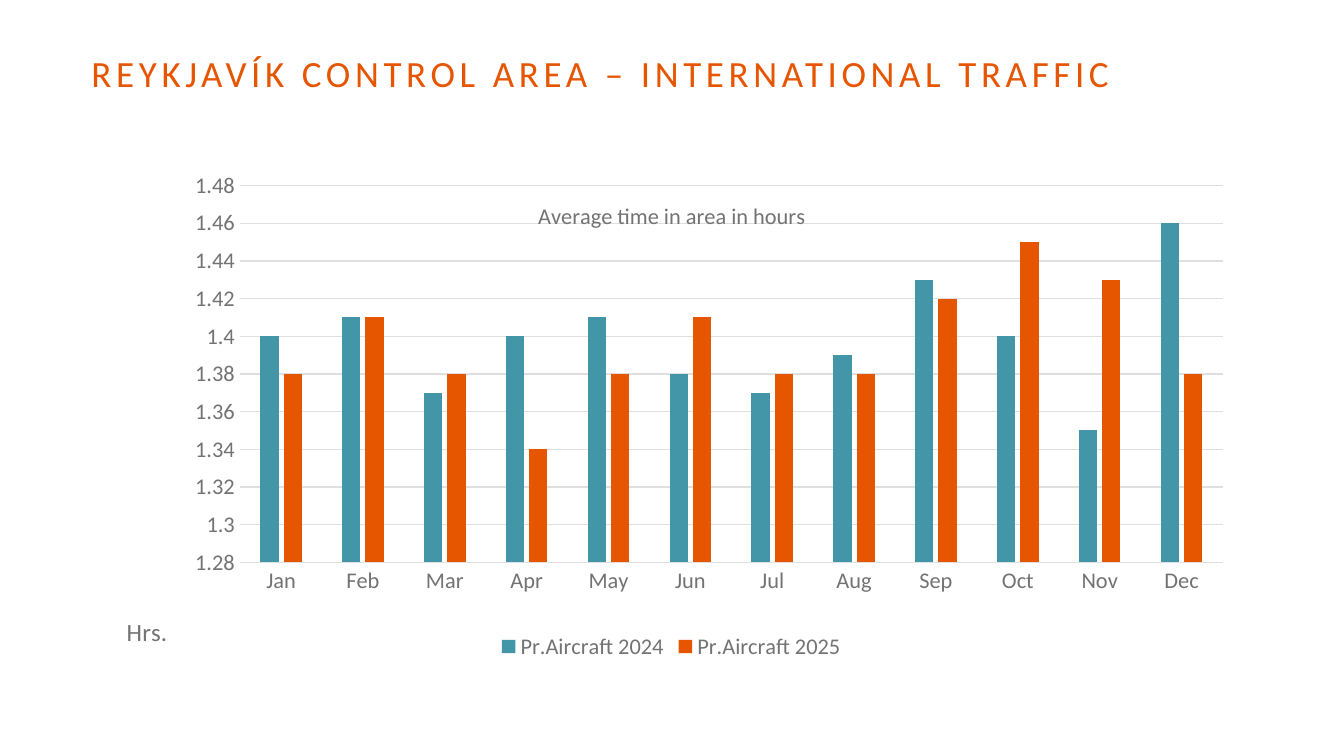
from lxml.etree import SubElement
from pptx import Presentation
from pptx.chart.data import CategoryChartData
from pptx.dml.color import RGBColor
from pptx.enum.chart import XL_CHART_TYPE as ChartType
from pptx.enum.chart import XL_LEGEND_POSITION as LegendPosition
from pptx.enum.chart import XL_TICK_MARK as TickMark
from pptx.enum.text import MSO_ANCHOR as Anchor
from pptx.enum.text import MSO_AUTO_SIZE as AutoSize
from pptx.enum.text import PP_ALIGN as Align
from pptx.oxml.ns import qn
from pptx.util import Pt

FONT = "Calibri"
ORANGE, TEAL, GREY, PALE = "E65500", "4396A7", "737373", "DFDFDF"
MONTHS = "Jan Feb Mar Apr May Jun Jul Aug Sep Oct Nov Dec".split()
SERIES = [
    ("Pr.Aircraft 2024", TEAL,
     [1.4, 1.41, 1.37, 1.4, 1.41, 1.38, 1.37, 1.39, 1.43, 1.4, 1.35, 1.46]),
    ("Pr.Aircraft 2025", ORANGE,
     [1.38, 1.41, 1.38, 1.34, 1.38, 1.41, 1.38, 1.38, 1.42, 1.45, 1.43, 1.38]),
]


def color(hex_code):
    return RGBColor.from_string(hex_code)


def style_font(font, size, hex_code):
    font.name = FONT
    font.size = Pt(size)
    font.bold = False
    font.color.rgb = color(hex_code)


def style_line(line, hex_code):
    line.color.rgb = color(hex_code)
    line.width = Pt(0.75)


def place(element, **settings):
    """Give a chart part a manual layout in fractions of the chart."""
    layout = element.find(qn("c:layout"))
    if layout is None:
        layout = SubElement(element, qn("c:layout"))
        element.insert(0, layout)
    manual = SubElement(layout, qn("c:manualLayout"))
    for name, value in settings.items():
        SubElement(manual, qn(f"c:{name}")).set("val", str(value))


def add_caption(title, text, size, x, y):
    """Write a chart or axis title and lay it over the chart at x, y."""
    frame = title.text_frame
    frame.text = text
    style_font(frame.paragraphs[0].font, size, GREY)
    body = title.element.find(".//" + qn("a:bodyPr"))
    body.set("rot", "0")
    body.set("vert", "horz")
    place(title.element, xMode="edge", yMode="edge", x=x, y=y)
    title.element.find(qn("c:overlay")).set("val", "1")


def set_title(page, text):
    box = page.shapes.title
    box.left, box.top, box.width, box.height = Pt(49), Pt(13.7), Pt(589), Pt(48.2)
    frame = box.text_frame
    frame.margin_left = frame.margin_right = 0
    frame.margin_top = frame.margin_bottom = 0
    frame.auto_size = AutoSize.NONE
    frame.word_wrap = True
    frame.vertical_anchor = Anchor.MIDDLE
    frame.text = text
    para = frame.paragraphs[0]
    para.alignment = Align.LEFT
    para.line_spacing = Pt(26)
    style_font(para.font, 19.8, ORANGE)
    para.runs[0].font.size = Pt(19.8)
    para.runs[0].font.element.set("spc", "250") if hasattr(
        para.runs[0].font, "element") else para.runs[0]._r.get_or_add_rPr().set("spc", "250")


def style_axes(chart):
    months, hours = chart.category_axis, chart.value_axis
    for axis in (months, hours):
        axis.major_tick_mark = axis.minor_tick_mark = TickMark.NONE
        style_font(axis.tick_labels.font, 12, GREY)
    style_line(months.format.line, PALE)
    months.has_major_gridlines = False
    hours.minimum_scale, hours.maximum_scale, hours.major_unit = 1.28, 1.48, 0.02
    hours.tick_labels.number_format = "General"
    hours.tick_labels.number_format_is_linked = False
    hours.format.line.fill.background()
    style_line(hours.major_gridlines.format.line, PALE)
    add_caption(hours.axis_title, "Hrs.", 13.3, 0.02, 0.89)


def add_time_chart(page):
    data = CategoryChartData()
    data.categories = MONTHS
    for name, _, values in SERIES:
        data.add_series(name, values)
    chart = page.shapes.add_chart(ChartType.COLUMN_CLUSTERED, Pt(53.3), Pt(89.3),
                                  Pt(612.7), Pt(267.1), data).chart
    style_font(chart.font, 10, "272727")
    add_caption(chart.chart_title, "Average time in area in hours", 12, 0.38, 0.06)
    place(chart.element.find(".//" + qn("c:plotArea")), layoutTarget="inner",
          xMode="edge", yMode="edge", x=0.123, y=0.038, w=0.859, h=0.756)
    style_axes(chart)

    plot = chart.plots[0]
    plot.gap_width, plot.overlap, plot.vary_by_categories = 219, -27, False
    for series, (_, hex_code, _) in zip(plot.series, SERIES):
        series.format.fill.solid()
        series.format.fill.fore_color.rgb = color(hex_code)

    chart.has_legend = True
    chart.legend.position = LegendPosition.BOTTOM
    chart.legend.include_in_layout = False
    style_font(chart.legend.font, 12, GREY)


def main():
    deck = Presentation()
    deck.slide_width, deck.slide_height = Pt(720), Pt(405)
    page = deck.slides.add_slide(deck.slide_layouts[5])
    set_title(page, "REYKJAVÍK CONTROL AREA – INTERNATIONAL TRAFFIC")
    add_time_chart(page)
    deck.save("out.pptx")


if __name__ == "__main__":
    main()
